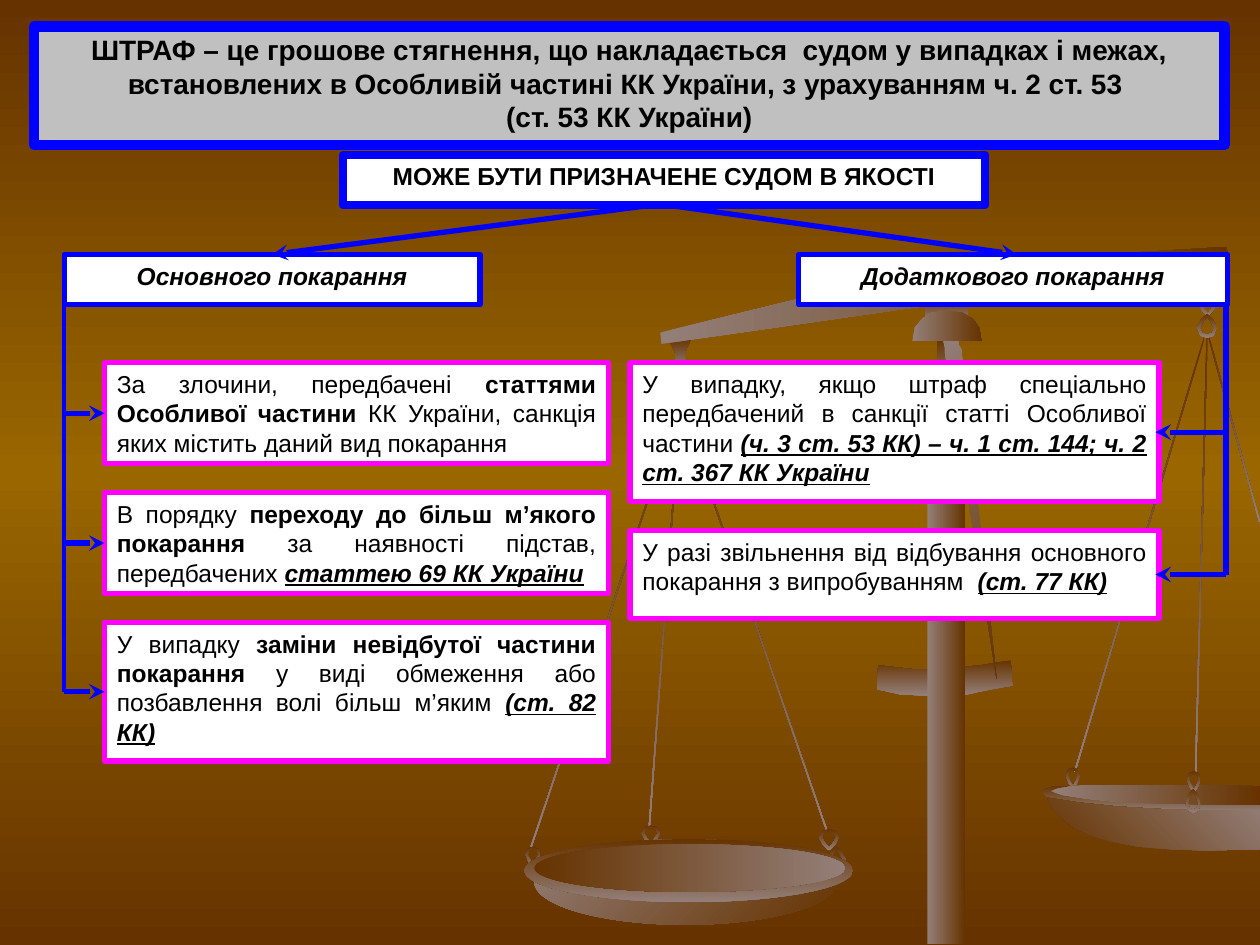
import copy
import pptx
import pptx.dml.color
import pptx.enum.shapes
import pptx.enum.text
import pptx.oxml.ns
import pptx.util
from lxml import etree

Inches = pptx.util.Inches
Kind = pptx.enum.shapes.MSO_SHAPE
Align = pptx.enum.text.PP_ALIGN
qn = pptx.oxml.ns.qn

THEME = {
    "font": "Arial", "title": 16, "body": 14,
    "ink": "000000", "paper": "FFFFFF", "grey": "C0C0C0",
    "blue": "0000FF", "pink": "FF00FF",
    "dark": "663300", "gold": "996600", "pale": "937F79",
}
UP, DOWN = ("dark", "pale"), ("pale", "dark")

TITLE = [
    "ШТРАФ – це грошове стягнення, що накладається  судом у випадках і межах, "
    "встановлених в Особливій частині КК України, з урахуванням ч. 2 ст. 53 ",
    "(ст. 53 КК України)",
]
HEADS = [
    ((0.27, 0.21, 9.45, 0.94), "grey", 6, "title", "b", TITLE),
    ((2.72, 1.23, 5.1, 0.4), "paper", 4.5, "body", "b",
     ["МОЖЕ БУТИ ПРИЗНАЧЕНЕ СУДОМ В ЯКОСТІ"]),
    ((0.51, 2.02, 3.3, 0.4), "paper", 3, "body", "bi", ["Основного покарання"]),
    ((6.34, 2.02, 3.4, 0.4), "paper", 3, "body", "bi", ["Додаткового покарання"]),
]
MAIN = [
    (0.8, [("За злочини, передбачені ", ""),
           ("статтями Особливої частини", "b"),
           (" КК України, санкція яких містить даний вид покарання", "")]),
    (0.8, [("В порядку ", ""),
           ("переходу до більш м’якого покарання ", "b"),
           ("за наявності підстав, передбачених ", ""),
           ("статтею 69 КК України", "biu")]),
    (1.1, [("У випадку ", ""),
           ("заміни невідбутої частини покарання ", "b"),
           ("у виді обмеження або позбавлення волі більш м’яким ", ""),
           ("(ст. 82 КК)", "biu")]),
]
EXTRA = [
    (1.1, [("У випадку, якщо штраф спеціально передбачений в санкції статті "
            "Особливої частини ", ""),
           ("(ч. 3 ст. 53 КК) – ч. 1 ст. 144; ч. 2 ст. 367 КК України", "biu")]),
    (0.7, [("У разі звільнення від відбування основного покарання "
            "з випробуванням  ", ""),
           ("(ст. 77 КК)", "biu")]),
]
LISTS = [
    {"left": 0.83, "wide": 4, "rail": 0.51, "edge": 0.83, "line": 2.25, "items": MAIN},
    {"left": 5, "wide": 4.2, "rail": 9.73, "edge": 9.17, "line": 3, "items": EXTRA},
]
TOP, GAP, FOOT = 2.88, 0.23, 2.41

CROSS = [(6.97, 5.28), (7.24, 5.31), (7.39, 5.31), (7.57, 5.3), (7.78, 5.28),
         (8.02, 5.24), (8.04, 5.44), (7.82, 5.48), (7.68, 5.51), (7.51, 5.52),
         (7.33, 5.52), (7.14, 5.51), (6.96, 5.47)]
RIM = [(9.58, 6.24), (8.85, 6.23), (8.65, 6.23), (8.46, 6.24), (8.36, 6.24),
       (8.28, 6.27), (8.27, 6.28), (8.3, 6.32), (8.42, 6.36), (8.63, 6.39),
       (8.94, 6.42), (9.35, 6.44), (9.79, 6.45), (10, 6.45), (10, 6.26)]
BOWL = [(8.31, 6.33), (8.35, 6.42), (8.42, 6.49), (8.52, 6.57), (8.65, 6.63),
        (8.82, 6.68), (9.03, 6.72), (9.28, 6.74), (9.57, 6.75), (10, 6.74),
        (10, 6.43), (9.53, 6.43), (9.18, 6.42), (8.86, 6.4), (8.57, 6.37)]
DISH = [(9.56, 6.23), (8.69, 6.23), (8.51, 6.24), (8.39, 6.26), (8.34, 6.28),
        (8.43, 6.31), (8.63, 6.34), (8.93, 6.37), (9.33, 6.38), (9.78, 6.39),
        (10, 6.39), (10, 6.24)]
HOOK = [(5.49, 2.68), (5.31, 2.7), (5.36, 2.8), (5.36, 2.94), (5.44, 2.94), (5.44, 2.79)]
BEAM = [(9.73, 1.96), (9.76, 2.08), (5.25, 2.73), (5.24, 2.64), (7.37, 2.12), (7.59, 2.09)]
STAY = [(7.91, 5.39), (7.5, 2.8), (7.5, 2.76), (7.48, 2.68), (7.6, 2.65),
        (7.61, 2.74), (7.63, 2.77)]
DOME = [(7.52, 2.47), (7.63, 2.48), (7.72, 2.53), (7.77, 2.6), (7.79, 2.71),
        (7.24, 2.71), (7.26, 2.6), (7.32, 2.53), (7.4, 2.48)]
LOOP = [[(0.5, 1), (0.8, 0.75), (1, 0.4), (0.82, 0.08), (0.5, 0),
         (0.18, 0.08), (0, 0.4), (0.2, 0.75)],
        [(0.5, 0.12), (0.75, 0.2), (0.85, 0.4), (0.65, 0.7), (0.5, 0.87),
         (0.35, 0.7), (0.15, 0.4), (0.25, 0.2)]]
SCALES = [
    ("bar", (7.34, 2.37, 0.34, 0.18), 0, UP, 90),
    ("bar", (9.04, 2.6, 0.01, 3.6), 16.6, UP, 90),
    ("ring", (8.46, 6.09, 0.11, 0.17), False, UP, 90),
    ("bar", (9.53, 2.66, 0.01, 3.47), 1.5, UP, 90),
    ("bar", (9.79, 2.64, 0.01, 1.53), 344.6, UP, 90),
    ("bar", (5.98, 3.15, 0.01, 3.53), 341, UP, 90),
    ("bar", (4.79, 3.16, 0.01, 3.68), 18.6, UP, 90),
    ("bar", (5.27, 3.25, 0.01, 3.31), 4.2, UP, 90),
    ("form", CROSS, 0, UP, 90),
    ("form", RIM, 0, UP, 90),
    ("form", BOWL, 0, UP, 315),
    ("form", DISH, 0, DOWN, 0),
    ("form", HOOK, 0, UP, 90),
    ("ring", (9.51, 2.34, 0.15, 0.17), False, UP, 90),
    ("ring", (9.5, 2.49, 0.16, 0.19), True, UP, 90),
    ("ring", (9.42, 6.12, 0.11, 0.17), False, UP, 90),
    ("form", BEAM, 0, DOWN, 0),
    ("ring", (5.09, 6.55, 0.15, 0.16), False, UP, 90),
    ("ring", (6.56, 6.72, 0.16, 0.19), True, UP, 90),
    ("ring", (4.17, 6.72, 0.12, 0.16), False, UP, 90),
    ("oval", (4.24, 6.66, 2.4, 0.68), 0, DOWN, 45),
    ("oval", (4.16, 6.66, 2.61, 0.5), 0, UP, 90),
    ("oval", (4.24, 6.7, 2.47, 0.38), 0, UP, 0),
    ("ring", (6.5, 6.58, 0.16, 0.17), False, UP, 90),
    ("ring", (9.41, 6.26, 0.12, 0.19), True, UP, 90),
    ("bar", (7.36, 3.08, 0.3, 4.41), 0, DOWN, 0),
    ("bar", (7.44, 2.68, 0.13, 0.42), 0, UP, 90),
    ("form", STAY, 0, DOWN, 45),
    ("form", DOME, 0, DOWN, 0),
]


def tint(name):
    return pptx.dml.color.RGBColor.from_string(THEME[name])


def blend(fill, names, angle):
    fill.gradient()
    fill.gradient_angle = -angle % 360
    for stop, name, place in zip(fill.gradient_stops, names, (0, 1)):
        stop.color.rgb = tint(name)
        stop.position = place


def trace(paths):
    paths = [[tuple(map(Inches, dot)) for dot in dots] for dots in paths]
    pen = shapes.build_freeform(*paths[0][0])
    pen.add_line_segments(paths[0][1:], close=True)
    for dots in paths[1:]:
        pen.move_to(*dots[0])
        pen.add_line_segments(dots[1:], close=True)
    return pen.convert_to_shape()


def ring(box, flip):
    x, y, w, h = box
    return trace([[(x + u * w, y + (1 - v if flip else v) * h) for u, v in dots]
                  for dots in LOOP])


def place(kind, box):
    shape = shapes.add_shape(kind, *map(Inches, box))
    shape.shadow.inherit = False
    return shape


def panel(box, fill, edge, width, size, align, paras):
    shape = place(Kind.RECTANGLE, box)
    shape.fill.solid()
    shape.fill.fore_color.rgb = tint(fill)
    shape.line.color.rgb = tint(edge)
    shape.line.width = pptx.util.Pt(width)
    frame = shape.text_frame
    frame.word_wrap = True
    frame.vertical_anchor = pptx.enum.text.MSO_ANCHOR.TOP
    for n, runs in enumerate(paras):
        para = frame.add_paragraph() if n else frame.paragraphs[0]
        para.alignment = align
        font = para.font
        font.name, font.size = THEME["font"], pptx.util.Pt(THEME[size])
        font.color.rgb = tint("ink")
        for text, style in runs:
            run = para.add_run()
            run.text = text
            run.font.bold = "b" in style
            run.font.italic = "i" in style
            run.font.underline = "u" in style


def link(start, end, width=3, arrow=True):
    line = shapes.add_connector(pptx.enum.shapes.MSO_CONNECTOR.STRAIGHT,
                                *map(Inches, start + end))
    line.line.color.rgb = tint("blue")
    line.line.width = pptx.util.Pt(width)
    if arrow:
        etree.SubElement(line.line._get_or_add_ln(), qn("a:tailEnd"), type="stealth")
    etree.SubElement(line._element.spPr, qn("a:effectLst"))


deck = pptx.Presentation()
deck.slide_width, deck.slide_height = Inches(10), Inches(7.5)
slide = deck.slides.add_slide(deck.slide_layouts[6])
shapes = slide.shapes

back = slide.background.fill
blend(back, ("dark", "gold"), 90)
stops = slide.element.find(".//" + qn("a:gsLst"))
stops.append(copy.deepcopy(stops[0]))
for stop, spot in zip(back.gradient_stops, (0, 0.5, 1)):
    stop.position = spot

for kind, data, turn, names, angle in SCALES:
    if kind == "form":
        part = trace([data])
    elif kind == "ring":
        part = ring(data, turn)
    else:
        part = place(Kind.OVAL if kind == "oval" else Kind.RECTANGLE, data)
        part.rotation = turn
    part.shadow.inherit = False
    part.line.fill.background()
    blend(part.fill, names, angle)

for box, fill, width, size, style, lines in HEADS:
    panel(box, fill, "blue", width, size, Align.CENTER, [[(t, style)] for t in lines])
for end in (2.16, 8.07):
    link((5.24, 1.62), (end, 2.02))

for col in LISTS:
    y, rail = TOP, col["rail"]
    for high, runs in col["items"]:
        panel((col["left"], y, col["wide"], high), "paper", "pink", 3, "body",
              Align.JUSTIFY, [runs])
        mid = y + high / 2
        link((rail, mid), (col["edge"], mid))
        y += high + GAP
    link((rail, FOOT), (rail, mid), col["line"], False)

deck.save("out.pptx")
